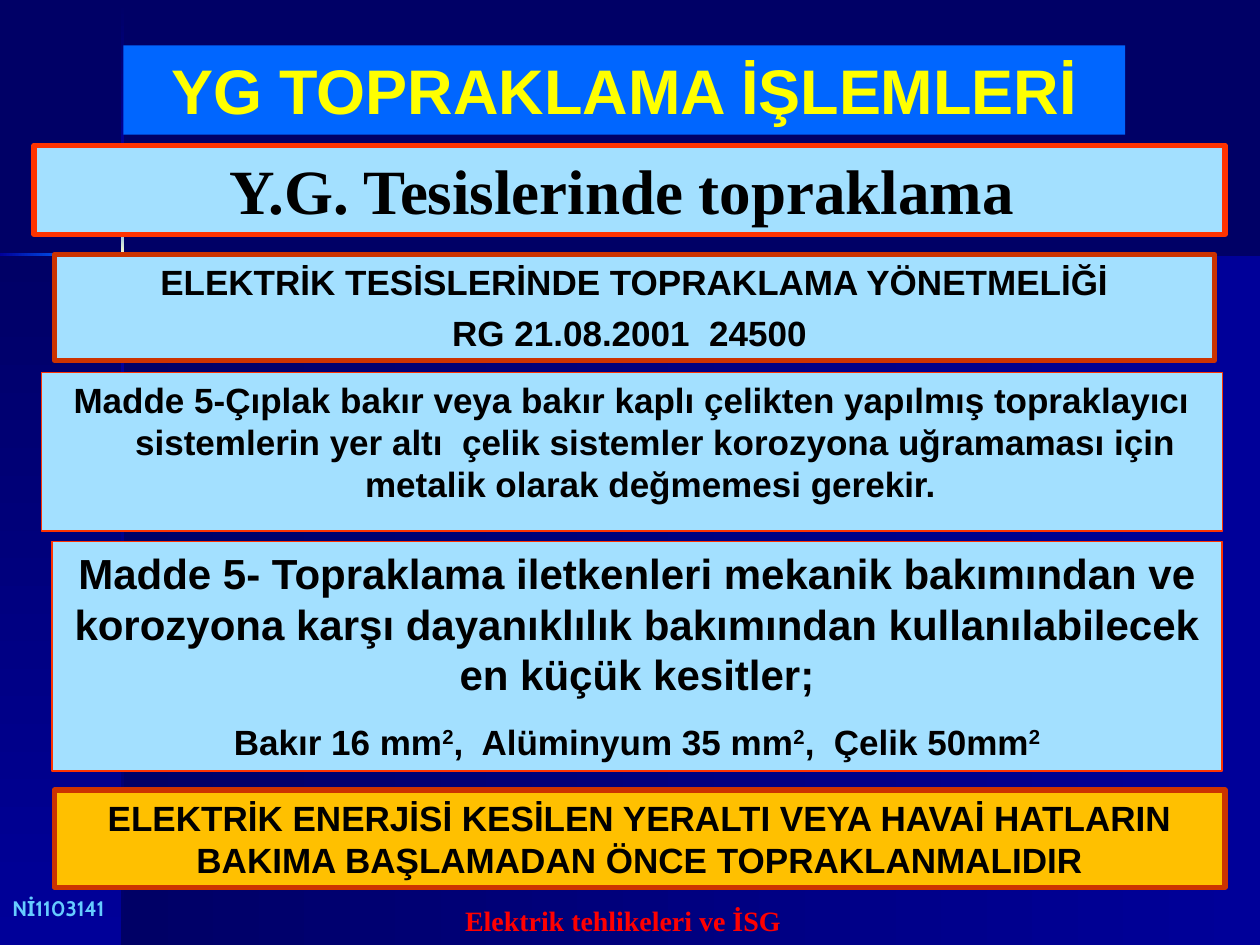
from copy import deepcopy
from dataclasses import dataclass

from pptx import Presentation
from pptx.dml.color import RGBColor
from pptx.enum.shapes import MSO_SHAPE
from pptx.enum.text import MSO_ANCHOR, PP_ALIGN
from pptx.oxml.ns import qn
from pptx.util import Pt


@dataclass(frozen=True)
class Theme:
    night: str = "000066"
    navy: str = "000099"
    blue: str = "0066FF"
    cream: str = "FFFFCC"
    sky: str = "A3E0FF"
    amber: str = "FFC000"
    rust: str = "CC3300"
    orange: str = "FF3300"
    yellow: str = "FFFF00"
    red: str = "FF0000"
    code_blue: str = "66CCFF"
    black: str = "000000"
    sans: str = "Arial"
    serif: str = "Times New Roman"
    code_font: str = "Cabin"
    title: int = 36
    lead: int = 24
    body: int = 20
    footer: int = 16
    code: int = 12


THEME = Theme()
WIDTH, HEIGHT = 720, 540
RIB = 1.5


def color(value):
    return RGBColor.from_string(value)


def add_rectangle(page, box):
    shape = page.shapes.add_shape(MSO_SHAPE.RECTANGLE, *map(Pt, box))
    shape.shadow.inherit = False
    shape.line.fill.background()
    return shape


def add_gradient(page, box, colors, down=False):
    shape = add_rectangle(page, box)
    fill = shape.fill
    fill.gradient()
    fill.gradient_angle = 270 if down else 0
    stop_list = shape._element.spPr.find(".//" + qn("a:gsLst"))
    for _ in colors[2:]:
        stop_list.append(deepcopy(stop_list[0]))
    for index, (stop, value) in enumerate(zip(fill.gradient_stops, colors)):
        stop.color.rgb = color(value)
        stop.position = index / (len(colors) - 1)


def add_backdrop(page, box):
    left, top, width, height = box
    page.background.fill.solid()
    page.background.fill.fore_color.rgb = color(THEME.night)
    split_x, split_y = left + 70, top + 145.5
    right, bottom = left + width, top + height
    rise = (THEME.night, THEME.navy)
    fall = rise[::-1]
    glow = (THEME.blue, THEME.cream, THEME.blue)

    add_gradient(page, (split_x, split_y, right - split_x, bottom - split_y), rise)
    add_gradient(page, (left, split_y, split_x - left, bottom - split_y), rise, True)

    rib_x, rib_y = split_x - RIB / 2, split_y - RIB / 2
    for start, end, colors in ((1, 87, rise), (119, 171, glow), (203, height, fall)):
        add_gradient(page, (rib_x, top + start, RIB, end - start), colors, True)
    for start, end, colors in (
        (0, 43.5, (THEME.navy, THEME.blue)),
        (43.5, 96, glow),
        (96, 127.5, (THEME.blue, THEME.navy)),
        (127.5, width, fall),
    ):
        add_gradient(page, (left + start, rib_y, end - start, RIB), colors)


def style(font, size, name, value):
    font.size = Pt(size)
    font.name = name
    font.bold = True
    font.color.rgb = color(value)


def write(shape, lines, size, name=THEME.sans, value=THEME.black,
          align=PP_ALIGN.CENTER, wrap=True):
    frame = shape.text_frame
    frame.text = "\n".join(lines)
    frame.word_wrap = wrap
    frame.vertical_anchor = MSO_ANCHOR.TOP
    for para in frame.paragraphs:
        para.alignment = align
        for span in para.runs:
            style(span.font, size, name, value)
    return frame


def add_panel(page, box, lines, size, fill, line=None, weight=3, **look):
    shape = add_rectangle(page, box)
    shape.fill.solid()
    shape.fill.fore_color.rgb = color(fill)
    if line:
        shape.line.color.rgb = color(line)
        shape.line.width = Pt(weight)
    return write(shape, lines, size, **look)


def add_regulation(page, box):
    frame = add_panel(
        page, box,
        ("ELEKTRİK TESİSLERİNDE TOPRAKLAMA YÖNETMELİĞİ", "RG 21.08.2001  24500 "),
        THEME.body, THEME.sky, THEME.rust)
    frame.paragraphs[1].space_before = Pt(5)


def add_corrosion_rule(page, box):
    frame = add_panel(
        page, box,
        ("Madde 5-Çıplak bakır veya bakır kaplı çelikten yapılmış topraklayıcı "
         "sistemlerin yer altı  çelik sistemler korozyona uğramaması için "
         "metalik olarak değmemesi gerekir. ",),
        THEME.body, THEME.sky, THEME.orange, 0.75)
    properties = frame.paragraphs[0]._p.get_or_add_pPr()
    properties.set("marL", str(Pt(27)))
    properties.set("indent", str(-Pt(27)))


def add_section_rule(page, box):
    frame = add_panel(
        page, box,
        ("Madde 5- Topraklama iletkenleri mekanik bakımından ve korozyona karşı "
         "dayanıklılık bakımından kullanılabilecek en küçük kesitler;",),
        THEME.lead, THEME.sky, THEME.orange, 1)
    para = frame.add_paragraph()
    para.alignment = PP_ALIGN.CENTER
    para.space_before = Pt(12)
    for area in ("Bakır 16 mm", ",  Alüminyum 35 mm", ",  Çelik 50mm"):
        for text in (area, "2"):
            span = para.add_run()
            span.text = text
            style(span.font, THEME.body, THEME.sans, THEME.black)
        span.font._element.set("baseline", "30000")


def add_footer(page, box):
    left, top, width, height = box
    code = page.shapes.add_textbox(Pt(left), Pt(top), Pt(150), Pt(20))
    write(code, ("Nİ1103141",), THEME.code, THEME.code_font, THEME.code_blue,
          PP_ALIGN.LEFT)
    course = page.shapes.add_textbox(Pt(left + 258), Pt(top + 5), Pt(196), Pt(27))
    write(course, ("Elektrik tehlikeleri ve İSG",), THEME.footer, THEME.serif,
          THEME.red, wrap=False)


def build_slide(deck):
    page = deck.slides.add_slide(deck.slide_layouts[6])
    add_backdrop(page, (0, 0, WIDTH, HEIGHT))
    add_footer(page, (0, 508, WIDTH, 32))
    add_regulation(page, (31, 145.5, 663, 60.5))
    add_panel(page, (19.5, 83, 680.5, 51), ("Y.G. Tesislerinde topraklama ",),
              THEME.title, THEME.sky, THEME.orange, name=THEME.serif)
    add_section_rule(page, (29.5, 309.5, 669, 131))
    add_corrosion_rule(page, (23.75, 213, 674.75, 90.5))
    add_panel(page, (70.5, 26, 572.5, 51), ("YG TOPRAKLAMA İŞLEMLERİ",),
              THEME.title, THEME.blue, value=THEME.yellow)
    add_panel(page, (31, 451.5, 669, 55.5),
              ("ELEKTRİK ENERJİSİ KESİLEN YERALTI VEYA HAVAİ HATLARIN "
               "BAKIMA BAŞLAMADAN ÖNCE TOPRAKLANMALIDIR",),
              THEME.body, THEME.amber, THEME.rust)


def main():
    deck = Presentation()
    deck.slide_width, deck.slide_height = Pt(WIDTH), Pt(HEIGHT)
    build_slide(deck)
    deck.save("out.pptx")


if __name__ == "__main__":
    main()
